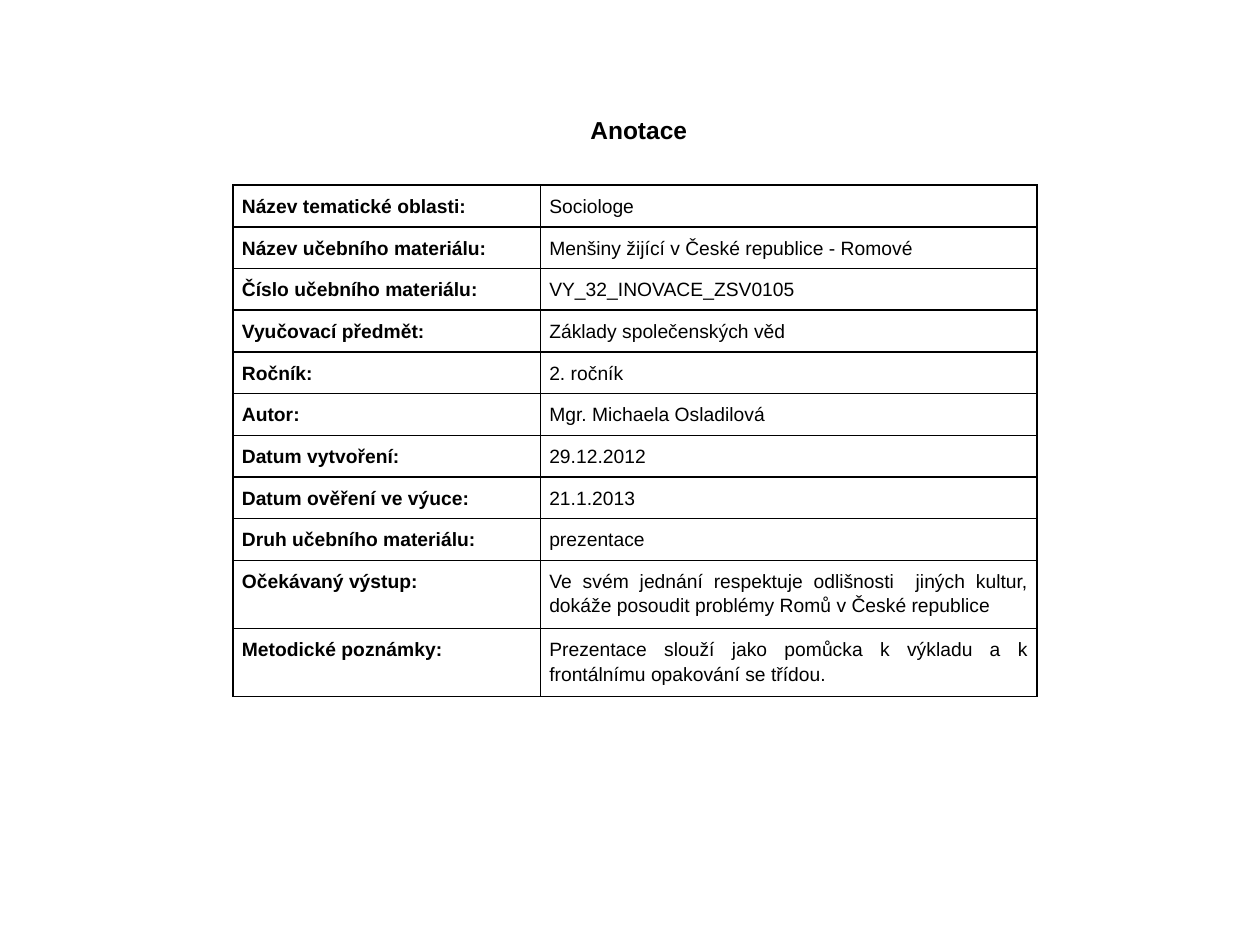
from typing import NamedTuple

from lxml.etree import SubElement
from pptx import Presentation
from pptx.dml.color import RGBColor
from pptx.enum.text import MSO_ANCHOR, MSO_AUTO_SIZE, PP_ALIGN
from pptx.oxml.ns import qn
from pptx.util import Inches, Pt

FONT = "Arial"
BLACK = "000000"
LINE_HEIGHT = 0.21
ROW_HEIGHT = 0.33
COLUMN_WIDTHS = (2.44, 3.94)


class Entry(NamedTuple):
    label: str
    value: str
    lines: int = 1
    label_align: PP_ALIGN = PP_ALIGN.LEFT


ENTRIES = [
    Entry("Název tematické oblasti:", "Sociologe"),
    Entry("Název učebního materiálu:", "Menšiny žijící v České republice - Romové"),
    Entry("Číslo učebního materiálu:", "VY_32_INOVACE_ZSV0105"),
    Entry("Vyučovací předmět:", "Základy společenských věd"),
    Entry("Ročník:", "2. ročník"),
    Entry("Autor:", "Mgr. Michaela Osladilová"),
    Entry("Datum vytvoření:", "29.12.2012"),
    Entry("Datum ověření ve výuce:", "21.1.2013"),
    Entry("Druh učebního materiálu:", "prezentace", 1, PP_ALIGN.JUSTIFY),
    Entry("Očekávaný výstup:",
          "Ve svém jednání respektuje odlišnosti  jiných kultur, "
          "dokáže posoudit problémy Romů v České republice", 2, PP_ALIGN.JUSTIFY),
    Entry("Metodické poznámky:",
          "Prezentace slouží jako pomůcka k výkladu a k "
          "frontálnímu opakování se třídou.", 2, PP_ALIGN.JUSTIFY),
]


def style_font(font, size: float, bold: bool, color: str = BLACK) -> None:
    font.name = FONT
    font.size = Pt(size)
    font.bold = bold
    font.color.rgb = RGBColor.from_string(color)


def add_borders(cell, color: str = BLACK, width: float = 1) -> None:
    properties = cell._tc.get_or_add_tcPr()
    for side in ("a:lnL", "a:lnR", "a:lnT", "a:lnB"):
        line = SubElement(properties, qn(side), w=str(Pt(width)))
        fill = SubElement(line, qn("a:solidFill"))
        SubElement(fill, qn("a:srgbClr"), val=color)


def fill_cell(cell, text: str, bold: bool, align: PP_ALIGN) -> None:
    add_borders(cell)
    cell.fill.background()
    cell.margin_left = cell.margin_right = Inches(0.07)
    cell.margin_top = cell.margin_bottom = Inches(0.06)
    cell.vertical_anchor = MSO_ANCHOR.TOP
    paragraph = cell.text_frame.paragraphs[0]
    paragraph.text = text
    paragraph.alignment = align
    paragraph.line_spacing = 1.15
    style_font(paragraph.runs[0].font, 11, bold)


def add_title(slide, text: str) -> None:
    title = slide.shapes.title
    title.left, title.top = Inches(1.83), Inches(0.86)
    title.width, title.height = Inches(6.48), Inches(0.34)
    frame = title.text_frame
    frame.text = text
    frame.word_wrap = True
    frame.auto_size = MSO_AUTO_SIZE.SHAPE_TO_FIT_TEXT
    frame.vertical_anchor = MSO_ANCHOR.MIDDLE
    frame.paragraphs[0].alignment = PP_ALIGN.CENTER
    style_font(frame.paragraphs[0].runs[0].font, 14, True)


def add_annotation_table(slide, entries: list[Entry]) -> None:
    heights = [ROW_HEIGHT + (entry.lines - 1) * LINE_HEIGHT for entry in entries]
    table = slide.shapes.add_table(
        len(entries), len(COLUMN_WIDTHS), Inches(1.85), Inches(1.47),
        Inches(sum(COLUMN_WIDTHS)), Inches(sum(heights))).table
    table.first_row = table.horz_banding = False
    for column, width in zip(table.columns, COLUMN_WIDTHS):
        column.width = Inches(width)
    for row, height, entry in zip(table.rows, heights, entries):
        row.height = Inches(height)
        label_cell, value_cell = row.cells
        fill_cell(label_cell, entry.label, True, entry.label_align)
        fill_cell(value_cell, entry.value, False, PP_ALIGN.JUSTIFY)


def main() -> None:
    presentation = Presentation()
    presentation.slide_width, presentation.slide_height = Inches(10), Inches(7.5)
    title_only = presentation.slide_layouts[5]
    slide = presentation.slides.add_slide(title_only)
    add_title(slide, "Anotace")
    add_annotation_table(slide, ENTRIES)
    presentation.save("out.pptx")


if __name__ == "__main__":
    main()
